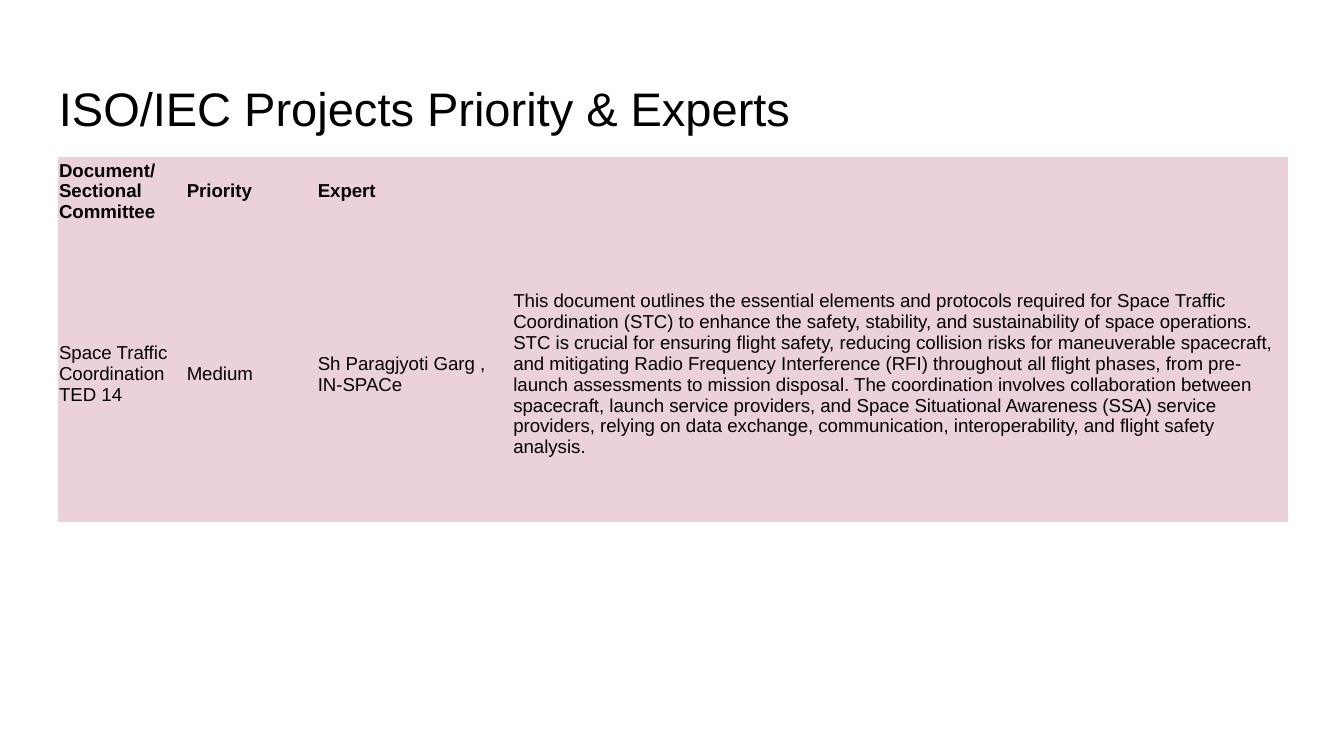
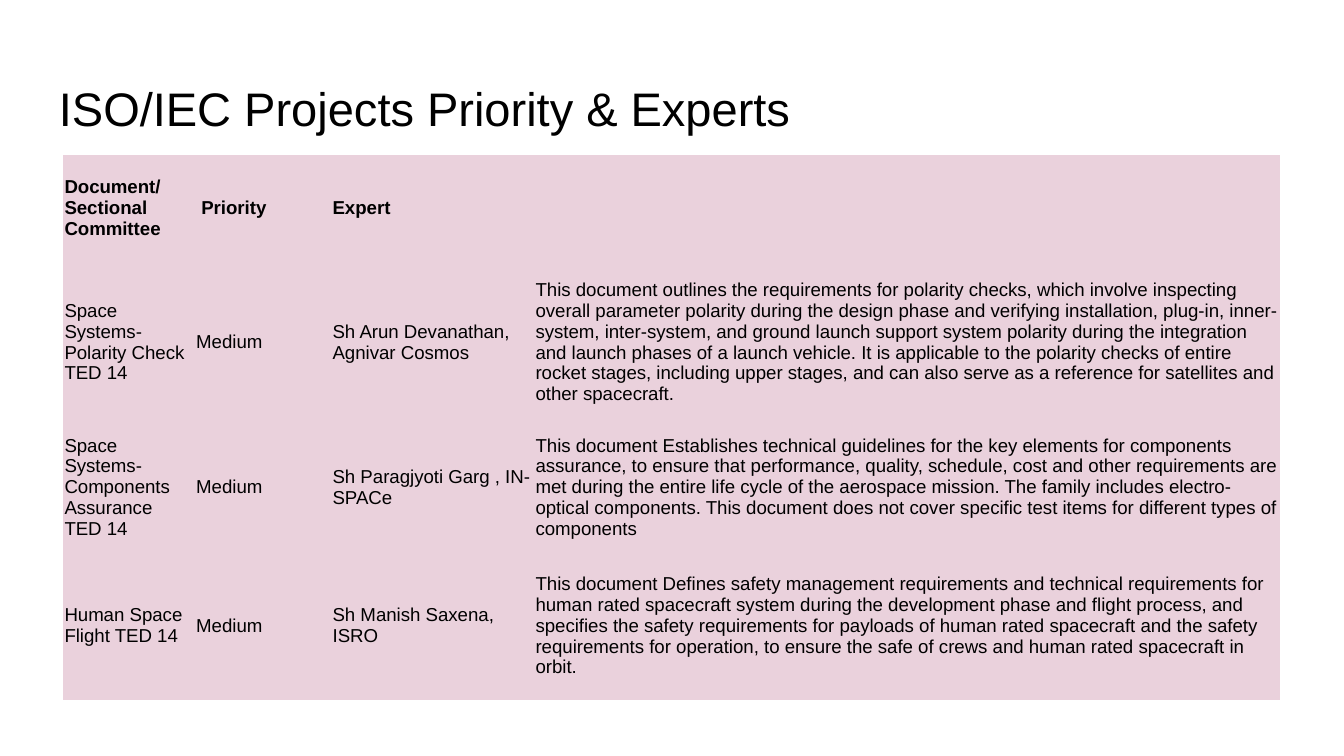
from typing import NamedTuple

from lxml import etree
from pptx import Presentation
from pptx.dml.color import RGBColor
from pptx.enum.text import MSO_ANCHOR
from pptx.oxml.ns import qn
from pptx.slide import Slide
from pptx.text.text import TextFrame
from pptx.util import Pt

MIDDLE = MSO_ANCHOR.MIDDLE

EMU_PER_PX = 4572  # 200 px to the inch
SLIDE_SIZE = (2000, 1125)
FONT = "Arial"
COLOURS = {"text": "000000", "cell": "EAD1DC", "background": "FFFFFF"}
PLAIN_TABLE_STYLE = "{2D5ABB26-0587-4C30-8999-92F81FD0307C}"

TITLE = "ISO/IEC Projects Priority & Experts"
TITLE_BOX = (68, 98, 1864, 126)
TABLE_FRAME = 656  # nominal side; columns and rows set the drawn size


class Project(NamedTuple):
    document: str
    expert: str
    scope: str
    priority: str = "Medium"


class ProjectSlide(NamedTuple):
    left: int
    top: int
    column_widths: list[int]
    row_heights: list[int]
    priority_heading: str
    projects: list[Project]


PROJECT_SLIDES = [
    ProjectSlide(86, 233, [190, 195, 291, 1155], [108, 422], "Priority", [
        Project(
            "Space Traffic Coordination TED 14",
            "Sh Paragjyoti Garg , IN-SPACe",
            "This document outlines the essential elements and protocols required "
            "for Space Traffic Coordination (STC) to enhance the safety, stability, "
            "and sustainability of space operations. STC is crucial for ensuring "
            "flight safety, reducing collision risks for maneuverable spacecraft, "
            "and mitigating Radio Frequency Interference (RFI) throughout all "
            "flight phases, from pre-launch assessments to mission disposal. The "
            "coordination involves collaboration between spacecraft, launch service "
            "providers, and Space Situational Awareness (SSA) service providers, "
            "relying on data exchange, communication, interoperability, and flight "
            "safety analysis."),
    ]),
    ProjectSlide(94, 231, [196, 203, 302, 1110], [176, 196, 210, 202], " Priority", [
        Project(
            "Space Systems- Polarity Check TED 14",
            "Sh Arun Devanathan, Agnivar Cosmos",
            "This document outlines the requirements for polarity checks, which "
            "involve inspecting overall parameter polarity during the design phase "
            "and verifying installation, plug-in, inner-system, inter-system, and "
            "ground launch support system polarity during the integration and "
            "launch phases of a launch vehicle. It is applicable to the polarity "
            "checks of entire rocket stages, including upper stages, and can also "
            "serve as a reference for satellites and other spacecraft."),
        Project(
            "Space Systems- Components Assurance TED 14",
            "Sh Paragjyoti Garg , IN-SPACe",
            "This document Establishes technical guidelines for the key elements "
            "for components assurance, to ensure that performance, quality, "
            "schedule, cost and other requirements are met during the entire life "
            "cycle of the aerospace mission. The family includes electro-optical "
            "components. This document does not cover specific test items for "
            "different types of components"),
        Project(
            "Human Space Flight TED 14",
            "Sh Manish Saxena, ISRO",
            "This document Defines safety management requirements and technical "
            "requirements for human rated spacecraft system during the development "
            "phase and flight process, and specifies the safety requirements for "
            "payloads of human rated spacecraft and the safety requirements for "
            "operation, to ensure the safe of crews and human rated spacecraft in "
            "orbit."),
    ]),
]


def px(length: int) -> int:
    return length * EMU_PER_PX


def write(frame: TextFrame, text: str, size: float, bold: bool = False) -> None:
    frame.word_wrap = True
    paragraph = frame.paragraphs[0]
    paragraph.text = text
    font = paragraph.font
    font.name, font.size, font.bold = FONT, Pt(size), bold
    font.color.rgb = RGBColor.from_string(COLOURS["text"])


def add_title(slide: Slide) -> None:
    frame = slide.shapes.add_textbox(*map(px, TITLE_BOX)).text_frame
    frame.margin_left = frame.margin_right = px(20)
    frame.margin_top = frame.margin_bottom = px(20)
    frame.vertical_anchor = MIDDLE
    write(frame, TITLE, 25.2)


def add_project_table(slide: Slide, content: ProjectSlide) -> None:
    headings = ("Document/Sectional Committee", content.priority_heading, "Expert", "")
    rows = [headings] + [(p.document, p.priority, p.expert, p.scope)
                         for p in content.projects]
    table_frame = slide.shapes.add_table(
        len(rows), len(headings), px(content.left), px(content.top),
        px(TABLE_FRAME), px(TABLE_FRAME))
    table = table_frame.table

    # Unbanded style without grid lines
    table.first_row = table.horz_banding = False
    for style in table._tbl.tblPr.findall(qn("a:tableStyleId")):
        table._tbl.tblPr.remove(style)
    style_id = etree.SubElement(table._tbl.tblPr, qn("a:tableStyleId"))
    style_id.text = PLAIN_TABLE_STYLE

    # Setting columns and rows resizes the frame, so its size is restored after
    for column, width in zip(table.columns, content.column_widths):
        column.width = px(width)
    for row, height in zip(table.rows, content.row_heights):
        row.height = px(height)
    table_frame.width = table_frame.height = px(TABLE_FRAME)

    # Heading row, then one row per project
    for row_index, texts in enumerate(rows):
        for column_index, text in enumerate(texts):
            cell = table.cell(row_index, column_index)
            cell.fill.solid()
            cell.fill.fore_color.rgb = RGBColor.from_string(COLOURS["cell"])
            cell.vertical_anchor = MIDDLE
            cell.margin_left = cell.margin_right = cell.margin_top = px(2)
            cell.margin_bottom = px(20)
            write(cell.text_frame, text, 10, bold=row_index == 0)


def main() -> None:
    deck = Presentation()
    deck.slide_width, deck.slide_height = map(px, SLIDE_SIZE)
    for content in PROJECT_SLIDES:
        slide = deck.slides.add_slide(deck.slide_layouts[6])
        slide.background.fill.solid()
        slide.background.fill.fore_color.rgb = RGBColor.from_string(COLOURS["background"])
        add_title(slide)
        add_project_table(slide, content)
    deck.save("out.pptx")


if __name__ == "__main__":
    main()
